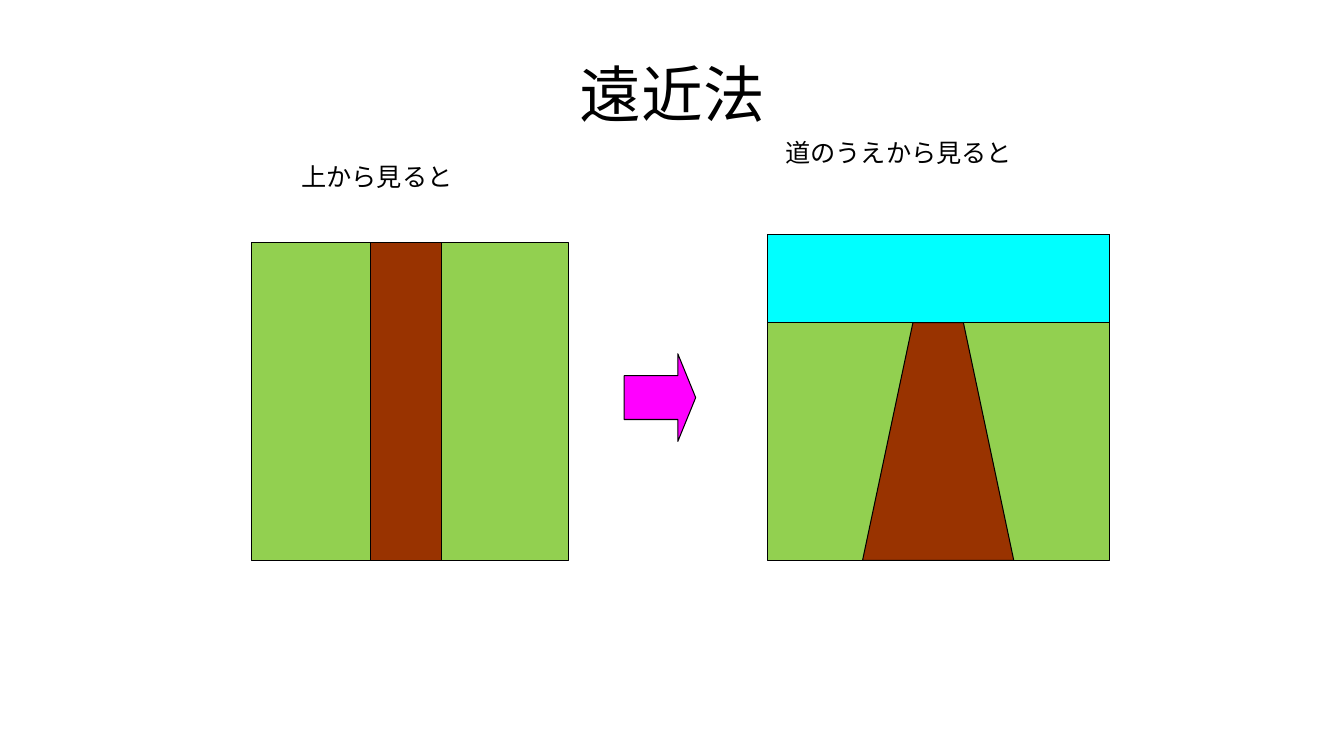
from dataclasses import dataclass

from pptx import Presentation
from pptx.dml.color import RGBColor
from pptx.enum import shapes, text
from pptx.util import Inches, Pt


@dataclass(frozen=True)
class Theme:
    ink: str = "000000"
    grass: str = "92D050"
    road: str = "993300"
    sky: str = "00FFFF"
    arrow: str = "FF00FF"
    line_width: float = 0.75
    title_font: str = "Calibri"
    title_size: int = 44
    label_font: str = "Arial"
    label_size: int = 18


THEME = Theme()
SHAPE = shapes.MSO_SHAPE


def add_text(s, words, x, y, w, h, font=THEME.label_font, size=THEME.label_size,
             align=text.PP_ALIGN.LEFT, anchor=text.MSO_ANCHOR.TOP):
    tf = s.shapes.add_textbox(Inches(x), Inches(y), Inches(w), Inches(h)).text_frame
    tf.word_wrap = True
    tf.vertical_anchor = anchor
    p = tf.paragraphs[0]
    p.alignment = align
    r = p.add_run()
    r.text = words
    r.font.name = font
    r.font.size = Pt(size)
    r.font.color.rgb = RGBColor.from_string(THEME.ink)


def paint(sp, fill):
    sp.shadow.inherit = False
    sp.fill.solid()
    sp.fill.fore_color.rgb = RGBColor.from_string(fill)
    sp.line.color.rgb = RGBColor.from_string(THEME.ink)
    sp.line.width = Pt(THEME.line_width)


def add_block(s, kind, fill, x, y, w, h):
    sp = s.shapes.add_shape(kind, Inches(x), Inches(y), Inches(w), Inches(h))
    paint(sp, fill)
    return sp


def add_title(s, x, y, w, h):
    add_text(s, "遠近法", x, y, w, h, font=THEME.title_font, size=THEME.title_size,
             align=text.PP_ALIGN.CENTER, anchor=text.MSO_ANCHOR.MIDDLE)


def add_top_view(s, x, y, w, h):
    add_text(s, "上から見ると", x + 0.4, y - 0.86, 2.76, 0.4)
    add_block(s, SHAPE.RECTANGLE, THEME.grass, x, y, w, h)
    # Road of constant width
    add_block(s, SHAPE.RECTANGLE, THEME.road, x + 1.18, y, 0.71, h)


def add_road_view(s, x, y, w, h, sky=0.87, near=1.5, far=0.5):
    add_text(s, "道のうえから見ると", x + 0.08, y - 1.02, w - 0.08, 0.4)
    add_block(s, SHAPE.RECTANGLE, THEME.grass, x, y, w, h)
    add_block(s, SHAPE.RECTANGLE, THEME.sky, x, y, w, sky)
    # Road narrowing towards the horizon
    middle, horizon, bottom = x + w / 2, y + sky, y + h
    corners = [(middle + near / 2, bottom), (middle + far / 2, horizon),
               (middle - far / 2, horizon), (middle - near / 2, bottom)]
    points = [(Inches(px), Inches(py)) for px, py in corners]
    road = s.shapes.build_freeform(*points[0])
    road.add_line_segments(points[1:], close=True)
    paint(road.convert_to_shape(), THEME.road)


def add_arrow(s, x, y, w, h):
    sp = add_block(s, SHAPE.RIGHT_ARROW, THEME.arrow, x, y, w, h)
    sp.adjustments[0] = 0.5
    sp.adjustments[1] = 0.25


def main():
    prs = Presentation()
    prs.slide_width, prs.slide_height = Inches(13.33), Inches(7.5)
    s = prs.slides.add_slide(prs.slide_layouts[6])
    add_title(s, 0.67, 0.3, 12, 1.25)
    add_top_view(s, 2.49, 2.41, 3.15, 3.15)
    add_road_view(s, 7.61, 2.33, 3.39, 3.23)
    add_arrow(s, 6.19, 3.51, 0.71, 0.87)
    prs.save("out.pptx")


if __name__ == "__main__":
    main()
